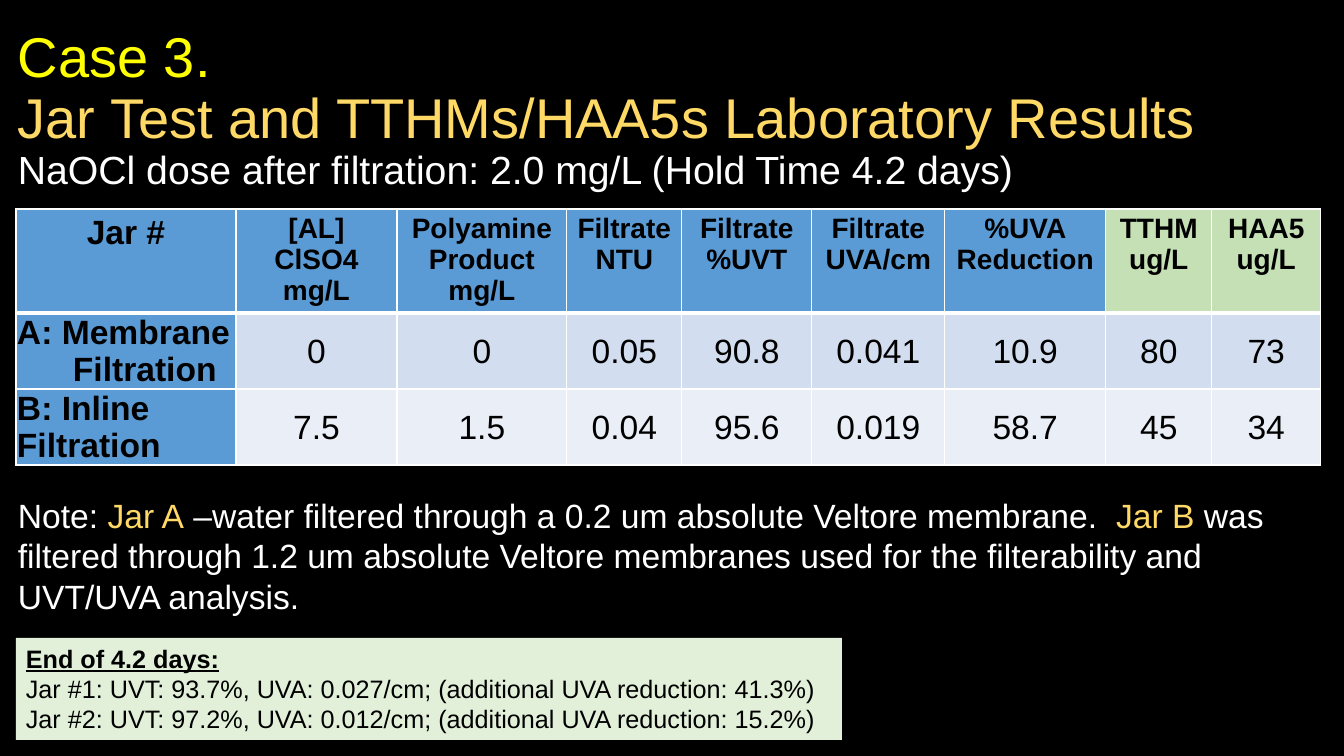
"""Build the Case 3 slide of jar test and TTHM/HAA5 results."""
from pptx import Presentation
from pptx.dml.color import RGBColor as Rgb
from pptx.enum.shapes import MSO_SHAPE as Shape
from pptx.enum.text import MSO_ANCHOR as Anchor, PP_ALIGN as Align
from pptx.oxml import parse_xml
from pptx.oxml.ns import nsdecls
from pptx.util import Pt

PX = 12192000 / 1344
HUES = {"black": "000000", "white": "FFFFFF", "yellow": "FFFF00", "gold": "FFD966",
        "blue": "5B9BD5", "green": "C5E0B4", "mint": "E2F0D9",
        "band 1": "D2DEEF", "band 2": "EAEFF7"}


def px(*nums):
    return [round(num * PX) for num in nums]


def write(frame, paras, align=Align.LEFT, space=None):
    frame.word_wrap = True
    for num, runs in enumerate(paras):
        para = frame.add_paragraph() if num else frame.paragraphs[0]
        para.alignment, para.line_spacing = align, space
        for text, hue, form in runs:
            run = para.add_run()
            run.text = text.rstrip("\n")
            run.font.name = "Arial"
            run.font.color.rgb = Rgb.from_string(HUES[hue])
            for key, val in form.items():
                setattr(run.font, key, val)
            if text.endswith("\n"):
                para.add_line_break()


deck = Presentation()
deck.slide_width, deck.slide_height = px(1344, 756)
slide = deck.slides.add_slide(deck.slide_layouts[6])
slide.background.fill.solid()
slide.background.fill.fore_color.rgb = Rgb.from_string(HUES["black"])

big, mid, note, small = [{"size": Pt(size)} for size in (40, 28, 24, 18)]
title = slide.shapes.add_textbox(*px(8, 16, 1313, 190)).text_frame
title.vertical_anchor = Anchor.MIDDLE
write(title, [[
    ("Case 3. \n", "yellow", big),
    ("Jar Test and TTHMs/HAA5s Laboratory Results\n", "gold", big),
    ("NaOCl dose after filtration: 2.0 mg/L (Hold Time 4.2 days)", "white", mid),
]], space=0.9)

heads = ["Jar #", "[AL]|ClSO4|mg/L", "Polyamine|Product|mg/L", "Filtrate|NTU",
         "Filtrate|%UVT", "Filtrate|UVA/cm", "%UVA|Reduction", "TTHM|ug/L", "HAA5|ug/L"]
rows = [heads,
        ["A: Membrane Filtration", "0", "0", "0.05", "90.8", "0.041", "10.9", "80", "73"],
        ["B: Inline Filtration", "7.5", "1.5", "0.04", "95.6", "0.019", "58.7", "45", "34"]]
wides = [220, 161, 170, 115, 130, 133, 161, 106, 109]
highs = [104, 76, 76]
grid = slide.shapes.add_table(3, 9, *px(16, 209, sum(wides), sum(highs))).table
for col, wide in zip(grid.columns, px(*wides)):
    col.width = wide
for row, high in zip(grid.rows, px(*highs)):
    row.height = high

for r, row in enumerate(rows):
    for c, text in enumerate(row):
        cell = grid.cell(r, c)
        props = cell._tc.get_or_add_tcPr()
        for side in "LRTB":
            thick = 3 if (r, side) in [(0, "B"), (1, "T")] else 1
            props.append(parse_xml(
                f'<a:ln{side} {nsdecls("a")} w="{Pt(thick)}"><a:solidFill>'
                f'<a:srgbClr val="{HUES["white"]}"/></a:solidFill></a:ln{side}>'))
        hue = "green" if r == 0 and c > 6 else "blue" if r == 0 or c == 0 else f"band {r}"
        cell.fill.solid()
        cell.fill.fore_color.rgb = Rgb.from_string(HUES[hue])
        pads = (10, 5, 10, 5) if r == 0 else (1, 1, 1, 0)
        for side, pad in zip(("left", "top", "right", "bottom"), px(*pads)):
            setattr(cell, f"margin_{side}", pad)
        cell.vertical_anchor = Anchor.MIDDLE if r else Anchor.TOP
        size, pitch = (20, 22) if r == 0 and c else (24, 26.7)
        form = {"size": Pt(size), "bold": r == 0 or c == 0}
        write(cell.text_frame, [[(part, "black", form)] for part in text.split("|")],
              Align.LEFT if r and c == 0 else Align.CENTER, Pt(pitch))

hang = grid.cell(1, 0).text_frame.paragraphs[0]._p.get_or_add_pPr()
for key, val in zip(("marL", "indent"), px(56, -56)):
    hang.set(key, str(val))

box = slide.shapes.add_shape(Shape.RECTANGLE, *px(16, 638, 826, 102))
box.shadow.inherit = False
box.fill.solid()
box.fill.fore_color.rgb = Rgb.from_string(HUES["mint"])
box.line.fill.background()
box.text_frame.vertical_anchor = Anchor.TOP
write(box.text_frame, [
    [("End of 4.2 days:", "black", {**small, "bold": True, "underline": True})],
    [("Jar #1: UVT: 93.7%, UVA: 0.027/cm; (additional UVA reduction: 41.3%)", "black", small)],
    [("Jar #2: UVT: 97.2%, UVA: 0.012/cm; (additional UVA reduction: 15.2%)", "black", small)],
])

write(slide.shapes.add_textbox(*px(8, 490, 1271, 132)).text_frame, [[
    ("Note: ", "white", note),
    ("Jar A", "gold", note),
    (" –water filtered through a 0.2 um absolute Veltore membrane.  ", "white", note),
    ("Jar B", "gold", note),
    (" was filtered through 1.2 um absolute Veltore membranes used for the filterability"
     " and UVT/UVA analysis.", "white", note),
]])

deck.save("out.pptx")
